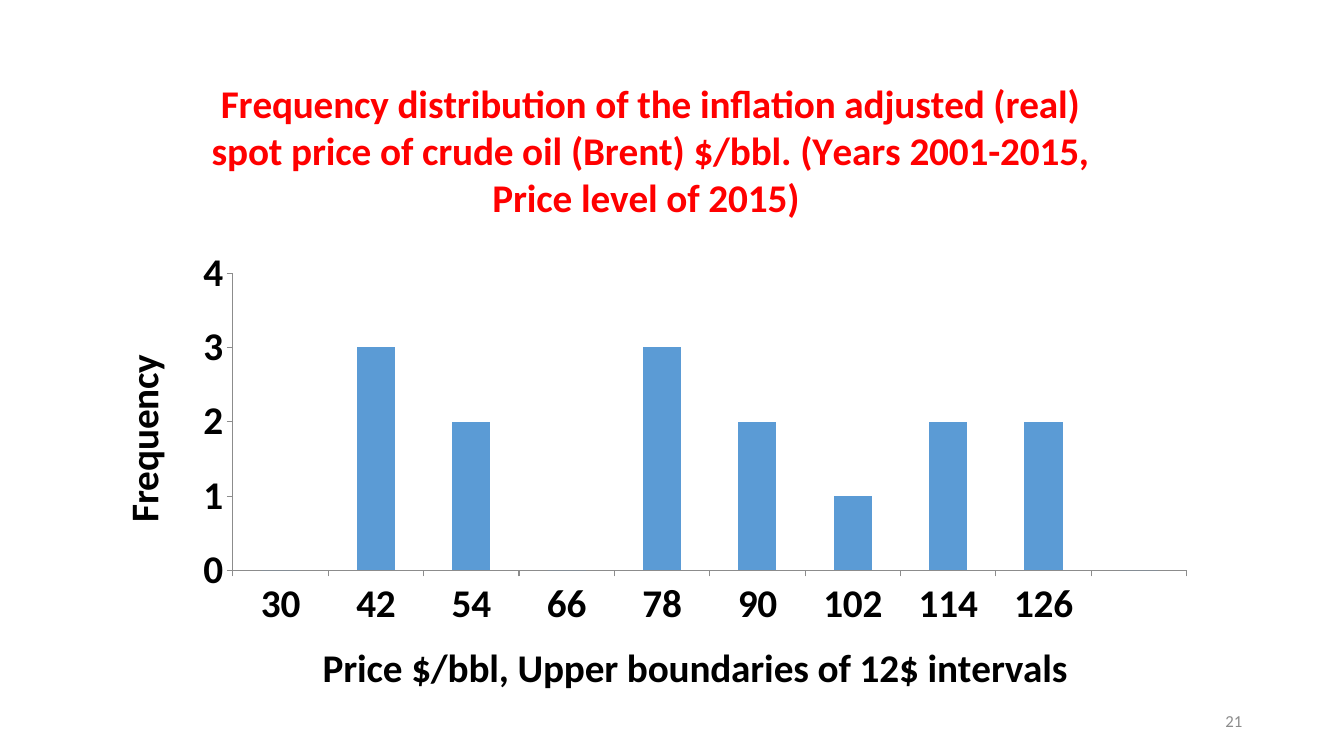
from dataclasses import dataclass

from lxml import etree
from pptx import Presentation
from pptx.chart.data import CategoryChartData
from pptx.dml.color import RGBColor
from pptx.enum.chart import XL_CHART_TYPE, XL_TICK_MARK
from pptx.enum.text import MSO_ANCHOR, PP_ALIGN
from pptx.oxml.ns import qn
from pptx.util import Inches, Pt

COLUMNS = XL_CHART_TYPE.COLUMN_CLUSTERED
TICK_OUT, TICK_NONE = XL_TICK_MARK.OUTSIDE, XL_TICK_MARK.NONE
RIGHT, MIDDLE = PP_ALIGN.RIGHT, MSO_ANCHOR.MIDDLE

# Content
HEADING = ("Frequency distribution of the inflation adjusted (real) spot price of "
           "crude oil (Brent) $/bbl. (Years 2001-2015, Price level of 2015) ")
PRICE_TITLE = "Price $/bbl, Upper boundaries of 12$ intervals"
FREQUENCY_TITLE = "Frequency"
FIRST_BOUND, INTERVAL = 30, 12
FREQUENCIES = [0, 3, 2, 0, 3, 2, 1, 2, 2, 0]
PAGE = "21"


@dataclass(frozen=True)
class Theme:
    font: str = "Calibri"
    heading: RGBColor = RGBColor(0xFF, 0, 0)
    ink: RGBColor = RGBColor(0, 0, 0)
    bar: RGBColor = RGBColor(0x5B, 0x9B, 0xD5)
    axis: RGBColor = RGBColor(0x8C, 0x8C, 0x8C)
    large: int = 28
    small: int = 12


THEME = Theme()

# Places in inches: first on the slide, then inside the chart
SLIDE = (13.33, 7.5)
CHART_BOX = (0.92, 0.5, 11.07, 6.55)
PAGE_BOX = (9.42, 6.95, 3, 0.4)
HEADING_AT = (1.11, 0.19)
PRICE_AT = (2.21, 5.79)
FREQUENCY_AT = (0.17, 2.95)
PLOT_AT = (1.39, 2.21, 9.46, 2.95)


def style(font, size, color, bold=False):
    font.name, font.size, font.bold = THEME.font, Pt(size), bold
    font.color.rgb = color


def add_run(paragraph, text, size, color, bold=False):
    run = paragraph.add_run()
    run.text = text
    style(run.font, size, color, bold)


def place(parent, index, box, inner=False):
    """Give a chart part a manual layout, in shares of the chart's size."""
    for old in parent.findall(qn("c:layout")):
        parent.remove(old)
    layout = etree.Element(qn("c:layout"))
    manual = etree.SubElement(layout, qn("c:manualLayout"))
    settings = [("layoutTarget", "inner")] if inner else []
    settings += [("xMode", "edge"), ("yMode", "edge")]
    chart_size = CHART_BOX[2:] * 2
    settings += [(side, str(length / whole))
                 for side, length, whole in zip("xywh", box, chart_size)]
    for tag, value in settings:
        etree.SubElement(manual, qn("c:" + tag)).set("val", value)
    parent.insert(index, layout)


def set_title(title, text, color, corner):
    add_run(title.text_frame.paragraphs[0], text, THEME.large, color, True)
    place(title._element, 1, corner)


def set_axis(axis, title, corner):
    axis.has_major_gridlines = False
    axis.major_tick_mark, axis.minor_tick_mark = TICK_OUT, TICK_NONE
    axis.format.line.color.rgb = THEME.axis
    axis.format.line.width = Pt(0.75)
    style(axis.tick_labels.font, THEME.large, THEME.ink, True)
    axis.has_title = True
    set_title(axis.axis_title, title, THEME.ink, corner)


def add_histogram(slide):
    data = CategoryChartData()
    bounds = [str(FIRST_BOUND + INTERVAL * i) for i in range(len(FREQUENCIES) - 1)]
    data.categories = bounds + [""]
    data.add_series("Series 1", FREQUENCIES)
    chart = slide.shapes.add_chart(COLUMNS, *map(Inches, CHART_BOX), data).chart
    style(chart.font, 10, THEME.ink)
    chart.has_legend = False
    chart.has_title = True
    set_title(chart.chart_title, HEADING, THEME.heading, HEADING_AT)

    # Axes and bars
    set_axis(chart.category_axis, PRICE_TITLE, PRICE_AT)
    set_axis(chart.value_axis, FREQUENCY_TITLE, FREQUENCY_AT)
    frequency = chart.value_axis
    frequency.minimum_scale, frequency.maximum_scale, frequency.major_unit = 0, 4, 1
    bars = chart.plots[0]
    bars.gap_width, bars.vary_by_categories = 150, False
    bars.series[0].format.fill.solid()
    bars.series[0].format.fill.fore_color.rgb = THEME.bar
    place(chart._chartSpace.chart.plotArea, 0, PLOT_AT, inner=True)


def add_page_number(slide):
    frame = slide.shapes.add_textbox(*map(Inches, PAGE_BOX)).text_frame
    frame.word_wrap, frame.vertical_anchor = True, MIDDLE
    frame.paragraphs[0].alignment = RIGHT
    add_run(frame.paragraphs[0], PAGE, THEME.small, THEME.axis)


def main():
    deck = Presentation()
    deck.slide_width, deck.slide_height = map(Inches, SLIDE)
    slide = deck.slides.add_slide(deck.slide_layouts[6])
    add_page_number(slide)
    add_histogram(slide)
    deck.save("out.pptx")


if __name__ == "__main__":
    main()
